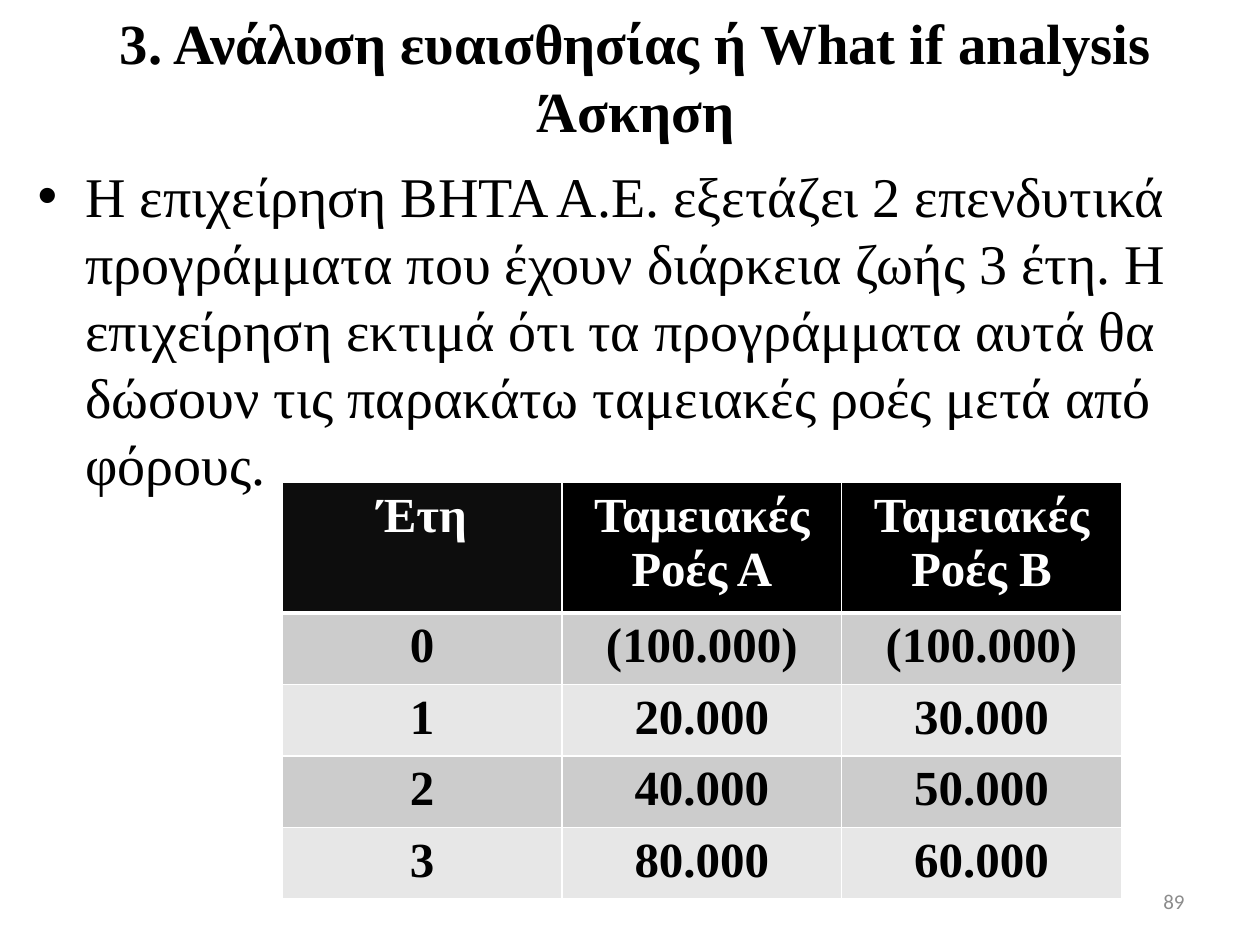
from pptx import Presentation
from pptx.dml.color import RGBColor
from pptx.enum.text import MSO_ANCHOR, PP_ALIGN
from pptx.oxml import parse_xml
from pptx.oxml.ns import nsdecls
from pptx.util import Inches, Pt

THEME = {
    "serif": "Times New Roman", "sans": "Calibri",
    "black": "000000", "white": "FFFFFF", "gray": "8C8C8C",
    "head": ["0D0D0D", "000000", "000000"], "bands": ["CCCCCC", "E7E7E7"],
    "title": 32.4, "body": 32, "cell": 28, "number": 12, "leading": 38.4,
}
TITLE = "3. Ανάλυση ευαισθησίας ή What if analysis Άσκηση"
BODY = (
    "Η επιχείρηση ΒΗΤΑ Α.Ε. εξετάζει 2 επενδυτικά προγράμματα που έχουν "
    "διάρκεια ζωής 3 έτη. Η επιχείρηση εκτιμά ότι τα προγράμματα αυτά θα "
    "δώσουν τις παρακάτω ταμειακές ροές μετά από φόρους."
)
NUMBER = "89"
CASH_FLOWS = [
    ("Έτη", "Ταμειακές Ροές Α", "Ταμειακές Ροές Β"),
    ("0", "(100.000)", "(100.000)"),
    ("1", "20.000", "30.000"),
    ("2", "40.000", "50.000"),
    ("3", "80.000", "60.000"),
]
COL_WIDTH, HEAD_HEIGHT, ROW_HEIGHT = 2.22, 0.95, 0.53


def add_run(p, text, size, color="black", font="serif", bold=False):
    r = p.add_run()
    r.text = text
    r.font.size = Pt(THEME[size])
    r.font.name = THEME[font]
    r.font.bold = bold
    r.font.color.rgb = RGBColor.from_string(THEME[color])


def add_paragraph_box(s, box, align, anchor):
    tf = s.shapes.add_textbox(*map(Inches, box)).text_frame
    tf.word_wrap = True
    tf.vertical_anchor = anchor
    p = tf.paragraphs[0]
    p.alignment = align
    return p


def add_bullet(p, indent):
    pPr = p._p.get_or_add_pPr()
    pPr.set("marL", str(Inches(indent)))
    pPr.set("indent", str(-Inches(indent)))
    pPr.append(parse_xml(f'<a:buFont {nsdecls("a")} typeface="Arial"/>'))
    pPr.append(parse_xml(f'<a:buChar {nsdecls("a")} char="•"/>'))


def set_borders(cell, widths):
    tcPr = cell._tc.get_or_add_tcPr()
    for i, (side, width) in enumerate(widths.items()):
        tcPr.insert(i, parse_xml(
            f'<a:ln{side} {nsdecls("a")} w="{Pt(width)}"><a:solidFill>'
            f'<a:srgbClr val="{THEME["white"]}"/></a:solidFill></a:ln{side}>'))


def add_cash_flows(s):
    rows, cols = len(CASH_FLOWS), len(CASH_FLOWS[0])
    height = HEAD_HEIGHT + ROW_HEIGHT * (rows - 1)
    table = s.shapes.add_table(
        rows, cols, Inches(2.24), Inches(3.83),
        Inches(COL_WIDTH * cols), Inches(height)).table
    for col in table.columns:
        col.width = Inches(COL_WIDTH)
    for i, values in enumerate(CASH_FLOWS):
        table.rows[i].height = Inches(ROW_HEIGHT if i else HEAD_HEIGHT)
        for j, text in enumerate(values):
            cell = table.cell(i, j)
            fill = THEME["bands"][(i - 1) % 2] if i else THEME["head"][j]
            cell.fill.solid()
            cell.fill.fore_color.rgb = RGBColor.from_string(fill)
            set_borders(cell, {"L": 1, "R": 1, "T": 3 if i == 1 else 1,
                               "B": 1 if i else 3})
            p = cell.text_frame.paragraphs[0]
            p.alignment = PP_ALIGN.CENTER
            add_run(p, text, "cell", "black" if i else "white", bold=True)


def main():
    prs = Presentation()
    prs.slide_width, prs.slide_height = Inches(10), Inches(7.5)
    s = prs.slides.add_slide(prs.slide_layouts[6])

    p = add_paragraph_box(s, (0.2, 0.13, 9.69, 0.95), PP_ALIGN.CENTER, MSO_ANCHOR.MIDDLE)
    p.line_spacing = Pt(THEME["leading"])
    add_run(p, TITLE, "title", bold=True)

    p = add_paragraph_box(s, (0.2, 1.23, 9.61, 6.06), PP_ALIGN.LEFT, MSO_ANCHOR.TOP)
    p.line_spacing = Pt(THEME["leading"])
    add_bullet(p, 0.38)
    add_run(p, BODY, "body")

    p = add_paragraph_box(s, (7.17, 6.95, 2.33, 0.4), PP_ALIGN.RIGHT, MSO_ANCHOR.MIDDLE)
    add_run(p, NUMBER, "number", "gray", "sans")

    add_cash_flows(s)
    prs.save("out.pptx")


if __name__ == "__main__":
    main()
